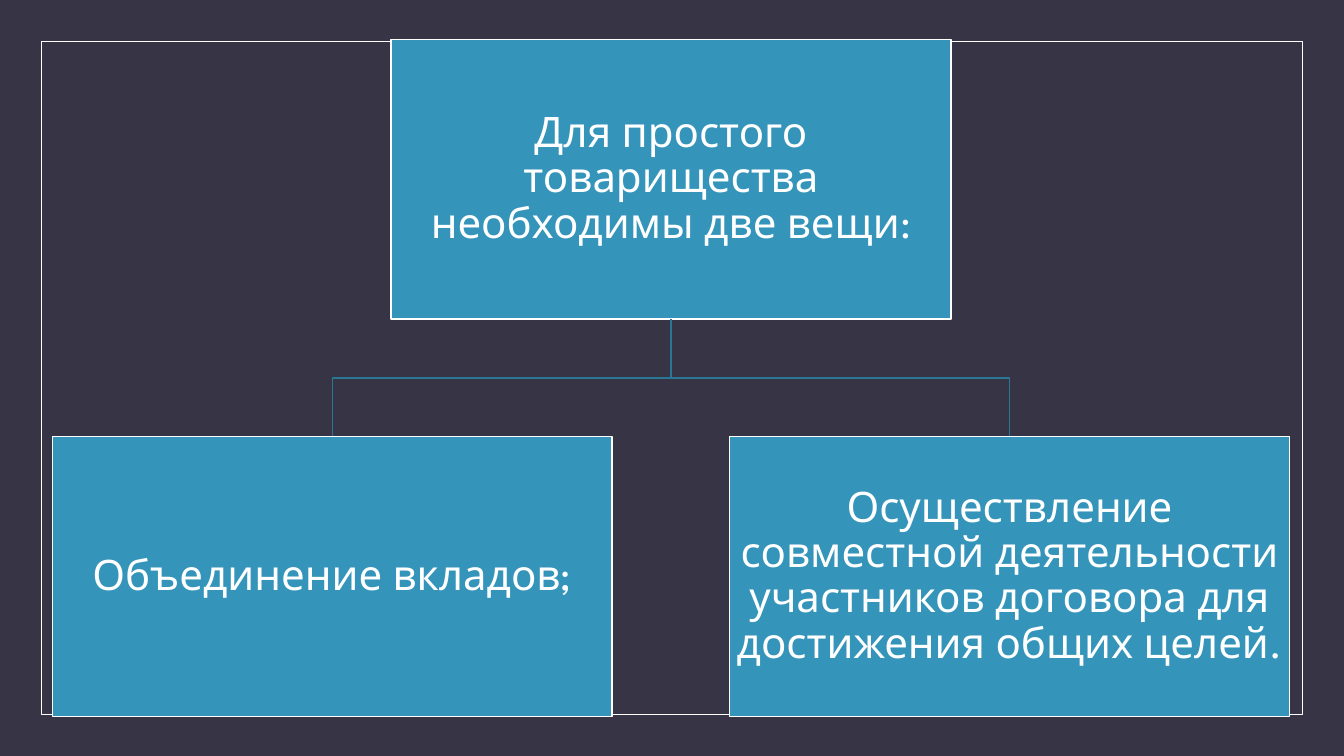
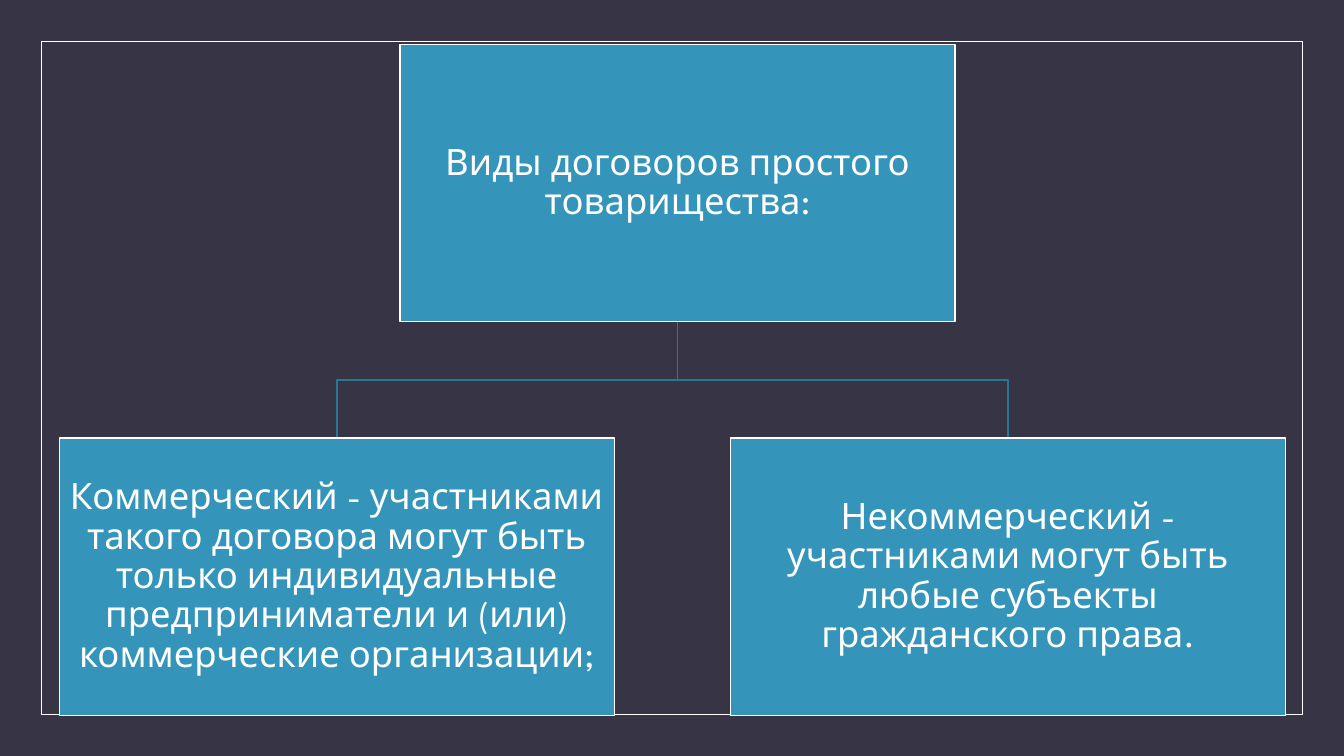
from dataclasses import dataclass
from pptx import Presentation
from pptx.dml.color import RGBColor
from pptx.enum.shapes import MSO_SHAPE
from pptx.enum.text import MSO_ANCHOR as Anchor, MSO_AUTO_SIZE as AutoSize, PP_ALIGN as Align
from pptx.util import Inches, Pt


@dataclass(frozen=True)
class Theme:
    backdrop: RGBColor = RGBColor(0x37, 0x35, 0x45)
    box: RGBColor = RGBColor(0x34, 0x94, 0xBA)
    branch: RGBColor = RGBColor(0x2A, 0x77, 0x95)
    light: RGBColor = RGBColor(0xFF, 0xFF, 0xFF)
    font: str = "League Spartan"
    frame_width: float = 0.5
    line_width: float = 1
    line_spacing: float = 0.9
    padding: float = 0.02


@dataclass(frozen=True)
class Box:
    left: float
    top: float
    width: float
    height: float

    @property
    def center(self):
        return self.left + self.width / 2

    @property
    def bottom(self):
        return self.top + self.height

    @property
    def inches(self):
        return [Inches(v) for v in (self.left, self.top, self.width, self.height)]


THEME = Theme()
SLIDE = Box(0, 0, 13.33, 7.5)
FRAME_INSET = 0.41
GAP = 0.21          # gap between boxes, as a share of box width
ASPECT = 0.5        # box height, as a share of box width
TITLE_ONLY = 5


def outline(shape, color, width):
    shape.line.color.rgb = color
    shape.line.width = Pt(width)


def add_frame(master, slide):
    """Put the thin border on the master, where all slides share it."""
    area = Box(FRAME_INSET, FRAME_INSET,
               SLIDE.width - 2 * FRAME_INSET, SLIDE.height - 2 * FRAME_INSET)
    frame = slide.shapes.add_shape(MSO_SHAPE.RECTANGLE, *area.inches)
    frame.shadow.inherit = False
    frame.fill.background()
    outline(frame, THEME.light, THEME.frame_width)
    master.shapes.element.append(frame.element)


def fill_box(shape, text, size):
    """Give a title or a leaf the common box look."""
    shape.fill.solid()
    shape.fill.fore_color.rgb = THEME.box
    outline(shape, THEME.light, THEME.line_width)
    frame = shape.text_frame
    frame.text = text
    frame.word_wrap = True
    frame.auto_size = AutoSize.NONE
    frame.vertical_anchor = Anchor.MIDDLE
    frame.margin_left = frame.margin_right = Inches(THEME.padding)
    frame.margin_top = frame.margin_bottom = Inches(THEME.padding)
    paragraph = frame.paragraphs[0]
    paragraph.alignment = Align.CENTER
    paragraph.line_spacing = THEME.line_spacing
    paragraph.font.name = THEME.font
    paragraph.font.size = Pt(size)
    paragraph.font.color.rgb = THEME.light


def add_branch(slide, root, leaf):
    """Draw the bent line from the root down to a leaf."""
    middle = (root.bottom + leaf.top) / 2
    points = [(root.center, root.bottom), (root.center, middle),
              (leaf.center, middle), (leaf.center, leaf.top)]
    start, *rest = [(Inches(x), Inches(y)) for x, y in points]
    builder = slide.shapes.build_freeform(*start)
    builder.add_line_segments(rest, close=False)
    branch = builder.convert_to_shape()
    branch.shadow.inherit = False
    branch.fill.background()
    outline(branch, THEME.branch, THEME.line_width)


def add_tree(slide, left, top, width, root_shift, size, title, leaves):
    """Place a titled root above a row of equal leaves."""
    count = len(leaves)
    box_width = width / (count + GAP * (count - 1))
    box_height = box_width * ASPECT
    step = box_width * (1 + GAP)
    root = Box(left + (width - box_width) / 2 + root_shift, top, box_width, box_height)
    leaf_top = root.bottom + box_width * GAP
    spots = [Box(left + i * step, leaf_top, box_width, box_height) for i in range(count)]

    for spot in spots:
        add_branch(slide, root, spot)

    # The root is the slide title
    heading = slide.shapes.title
    heading.left, heading.top, heading.width, heading.height = root.inches
    fill_box(heading, title, size)

    for spot, text in zip(spots, leaves):
        leaf = slide.shapes.add_shape(MSO_SHAPE.RECTANGLE, *spot.inches)
        leaf.shadow.inherit = False
        fill_box(leaf, text, size)


TREES = [
    dict(left=0.52, top=0.39, width=12.27, root_shift=0, size=30,
         title="Для простого товарищества необходимы две вещи:",
         leaves=["Объединение вкладов;",
                 "Осуществление совместной деятельности участников договора "
                 "для достижения общих целей."]),
    dict(left=0.59, top=0.44, width=12.16, root_shift=0.05, size=26,
         title="Виды договоров простого товарищества:",
         leaves=["Коммерческий - участниками такого договора могут быть только "
                 "индивидуальные предприниматели и (или) коммерческие организации;",
                 "Некоммерческий - участниками могут быть любые субъекты "
                 "гражданского права."]),
]


def main():
    deck = Presentation()
    deck.slide_width, deck.slide_height = Inches(SLIDE.width), Inches(SLIDE.height)
    master = deck.slide_master
    master.background.fill.solid()
    master.background.fill.fore_color.rgb = THEME.backdrop
    slides = [deck.slides.add_slide(deck.slide_layouts[TITLE_ONLY]) for _ in TREES]
    add_frame(master, slides[0])
    for slide, tree in zip(slides, TREES):
        add_tree(slide, **tree)
    deck.save("out.pptx")


if __name__ == "__main__":
    main()
